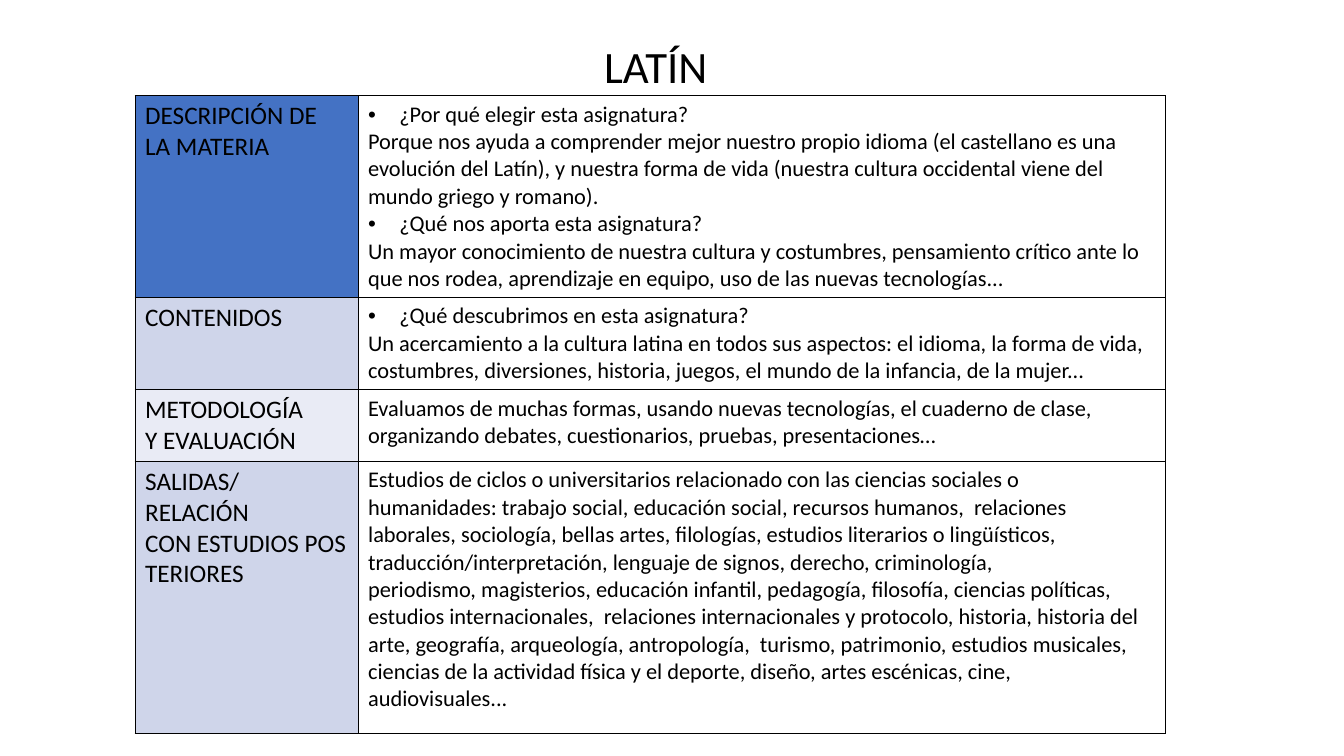
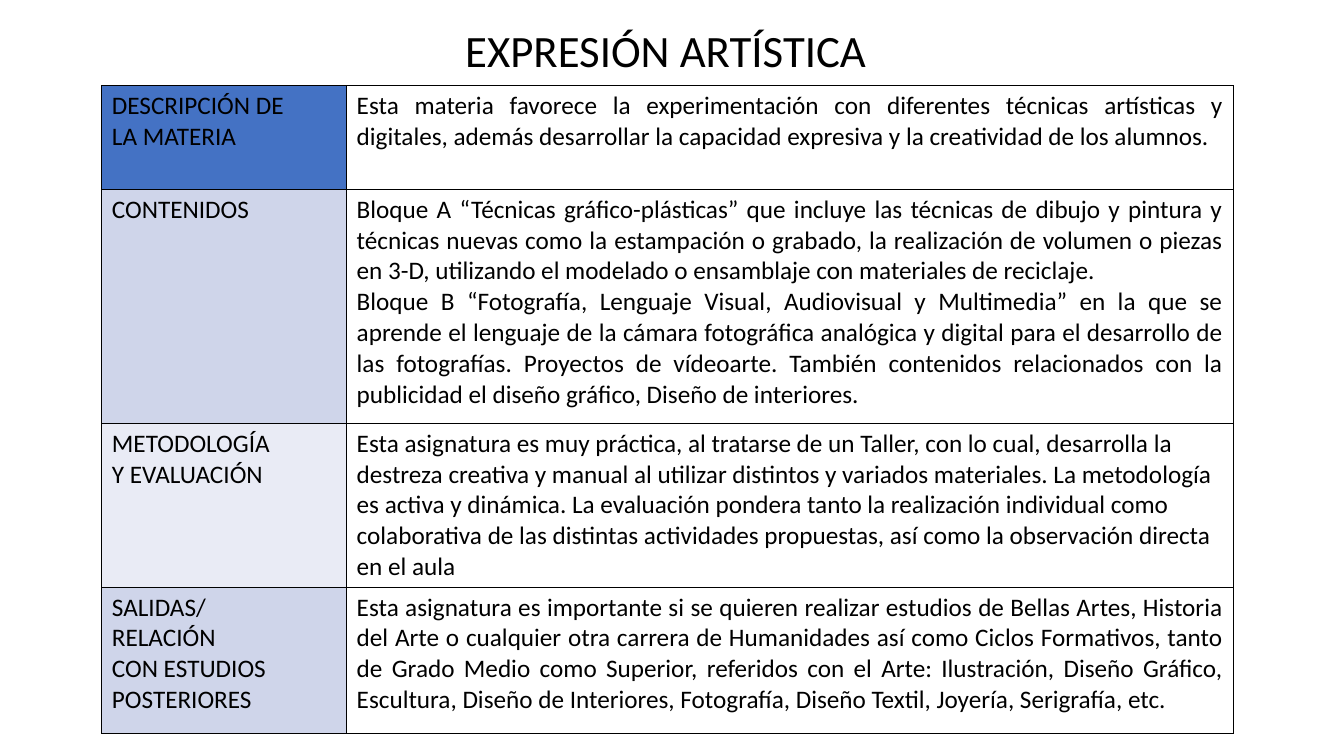
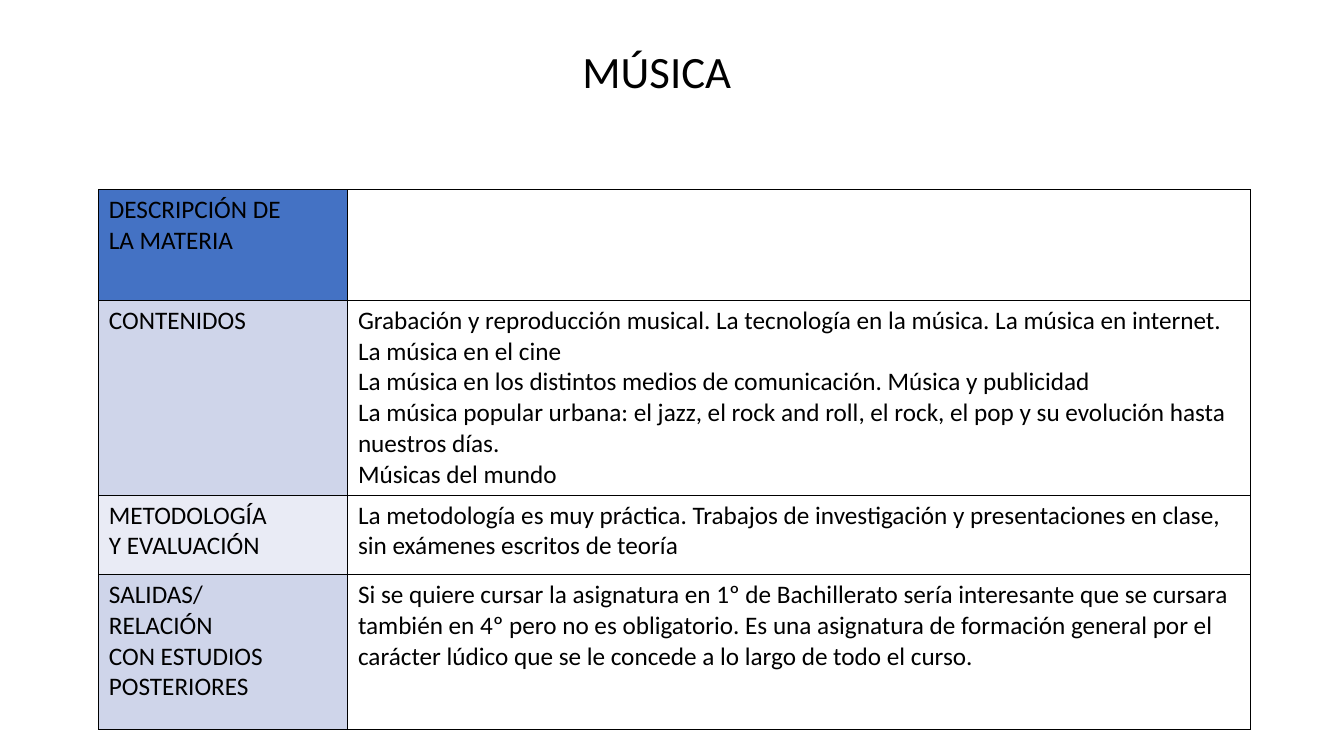
from lxml import etree
from pptx import Presentation
from pptx import util as u
from pptx.dml.color import RGBColor
from pptx.enum import text as t
from pptx.oxml import ns

COLORS = {"ink": "000000", "first": "4472C4", "dark": "CFD5EA", "light": "E9EBF5"}
FONT = "Calibri"
SLIDE_W, SLIDE_H = u.Inches(13.33), u.Inches(7.5)
TITLE_W, TITLE_H = 37.13, 8.4  # percent of the slide
LABEL_SHARE = 21.64  # percent of the table width
LABEL_FILLS = ("first", "dark", "light", "dark")
LABEL_SIZE = 18
BULLET = "• "
BULLET_INDENT = u.Inches(0.31)
HARD_SPACE = "~"  # stands for a no-break space in the texts below

LABELS = [
    ["DESCRIPCIÓN DE LA~MATERIA"],
    ["CONTENIDOS"],
    ["METODOLOGÍA Y~EVALUACIÓN"],
    ["SALIDAS/", "RELACIÓN CON~ESTUDIOS~", "POSTERIORES"],
]

SUBJECTS = [
    {
        "name": "LATÍN",
        "title_at": (30.23, 4.53),
        "table_at": (10.05, 12.67),
        "width": 76.67,
        "rows": (26.67, 12, 9.33, 36),
        "size": 16,
        "labels": LABELS[:3] + [["SALIDAS/", "RELACIÓN CON~ESTUDIOS~POSTERIORES"]],
        "details": [
            ["• ¿Por qué elegir esta asignatura?~",
             "Porque nos ayuda a comprender mejor nuestro propio~idioma (el castellano es una "
             "evolución del Latín), y nuestra forma de~vida (nuestra cultura occidental viene "
             "del mundo griego y~romano).~",
             "• ¿Qué nos aporta esta asignatura?~",
             "Un mayor conocimiento de nuestra cultura y costumbres,~pensamiento crítico ante "
             "lo que nos rodea, aprendizaje en~equipo, uso de las nuevas tecnologías...~"],
            ["• ¿Qué descubrimos en esta asignatura?~",
             "Un acercamiento a la cultura latina en todos sus aspectos:~el idioma, la forma de "
             "vida, costumbres, diversiones,~historia, juegos, el mundo de la infancia, de la "
             "mujer...~"],
            ["Evaluamos de muchas formas, usando nuevas tecnologías, el cuaderno de clase, "
             "organizando debates, cuestionarios, pruebas, presentaciones…"],
            ["Estudios de ciclos o universitarios relacionado con las ciencias sociales o "
             "humanidades:~trabajo social, educación social, recursos humanos,~ relaciones "
             "laborales, sociología, bellas artes, filologías, estudios literarios o "
             "lingüísticos, traducción/interpretación, lenguaje de signos, derecho, "
             "criminología,~ periodismo,~magisterios,~educación infantil, pedagogía, "
             "filosofía, ciencias políticas, estudios internacionales,~ relaciones "
             "internacionales y protocolo, historia, historia del arte, geografía, "
             "arqueología, antropología,~~turismo,~patrimonio, estudios musicales, ciencias "
             "de la actividad física y el deporte, diseño, artes~escénicas, cine, "
             "audiovisuales...~"],
        ],
    },
    {
        "name": "EXPRESIÓN ARTÍSTICA",
        "title_at": (30.98, 2.4),
        "table_at": (7.58, 11.33),
        "width": 84.17,
        "rows": (13.73, 30.93, 21.33, 19.33),
        "justified": (0, 1, 3),
        "details": [
            ["Esta materia favorece la experimentación con diferentes técnicas artísticas y "
             "digitales, además desarrollar la capacidad expresiva y la creatividad de los "
             "alumnos.~"],
            ["Bloque A “Técnicas gráfico-plásticas” que incluye las técnicas de dibujo y "
             "pintura y técnicas nuevas como la estampación o grabado, la realización de "
             "volumen o piezas en 3-D, utilizando el modelado o ensamblaje con materiales de "
             "reciclaje.",
             "Bloque B “Fotografía, Lenguaje Visual, Audiovisual y Multimedia” en la que se "
             "aprende el lenguaje de la cámara fotográfica analógica y digital para el "
             "desarrollo de las fotografías. Proyectos de vídeoarte. También contenidos "
             "relacionados con la publicidad el diseño gráfico, Diseño de interiores."],
            ["Esta asignatura es muy práctica, al tratarse de un Taller, con lo cual, "
             "desarrolla la destreza creativa y manual al utilizar distintos y variados "
             "materiales. La metodología es activa y dinámica. La evaluación pondera tanto la "
             "realización individual como colaborativa de las distintas actividades "
             "propuestas, así como la observación directa en el aula"],
            ["Esta asignatura es importante si se quieren realizar estudios de Bellas Artes, "
             "Historia del Arte o cualquier otra carrera de Humanidades así como Ciclos "
             "Formativos, tanto de Grado Medio como Superior, referidos con el Arte: "
             "Ilustración, Diseño Gráfico, Escultura, Diseño de Interiores, Fotografía, "
             "Diseño Textil, Joyería, Serigrafía, etc."],
        ],
    },
    {
        "name": "MÚSICA",
        "title_at": (30.31, 5.2),
        "table_at": (7.35, 25.07),
        "width": 85.67,
        "rows": (14.67, 25.33, 10.53, 20.53),
        "details": [
            [],
            ["Grabación y reproducción musical. La tecnología en la música. La música "
             "en~internet.",
             "La música en el cine",
             "La música en los distintos medios de comunicación. Música y publicidad",
             "La música popular urbana: el jazz, el rock and roll, el rock, el pop y "
             "su~evolución hasta nuestros días.",
             "Músicas del mundo"],
            ["La metodología es muy práctica. Trabajos de investigación y presentaciones en "
             "clase, sin exámenes escritos de teoría"],
            ["Si se quiere cursar la asignatura en 1º de Bachillerato sería interesante que "
             "se cursara también en 4º pero no es obligatorio. Es una asignatura de formación "
             "general por el carácter lúdico que se le concede a lo largo de todo el curso."],
        ],
    },
]


def across(percent):
    return round(SLIDE_W * percent / 100)


def down(percent):
    return round(SLIDE_H * percent / 100)


def add_bullet(paragraph):
    props = paragraph._p.get_or_add_pPr()
    props.set("marL", str(BULLET_INDENT))
    props.set("indent", str(-BULLET_INDENT))
    etree.SubElement(props, ns.qn("a:buFont"), typeface="Arial")
    etree.SubElement(props, ns.qn("a:buChar"), char=BULLET.strip())


def write(frame, lines, size=LABEL_SIZE, align=t.PP_ALIGN.LEFT, color="ink"):
    """Fill a text frame, one paragraph a line; a leading bullet makes a list item."""
    for number, line in enumerate(lines):
        paragraph = frame.add_paragraph() if number else frame.paragraphs[0]
        paragraph.alignment = align
        if line.startswith(BULLET):
            add_bullet(paragraph)
        run = paragraph.add_run()
        run.text = line.removeprefix(BULLET).replace(HARD_SPACE, chr(160))
        run.font.name, run.font.size = FONT, u.Pt(size)
        run.font.color.rgb = RGBColor.from_string(COLORS[color])


def style_cell(cell, fill=None):
    """Draw a thin border on all sides, then fill the cell or leave it clear."""
    props = cell._tc.get_or_add_tcPr()
    for side in ("lnL", "lnR", "lnT", "lnB"):
        line = etree.SubElement(props, ns.qn(f"a:{side}"), w=str(u.Pt(0.75)))
        solid = etree.SubElement(line, ns.qn("a:solidFill"))
        etree.SubElement(solid, ns.qn("a:srgbClr"), val=COLORS["ink"])
    if fill:
        cell.fill.solid()
        cell.fill.fore_color.rgb = RGBColor.from_string(COLORS[fill])
    else:
        cell.fill.background()


def place_title(slide, name, left, top):
    title = slide.shapes.title
    title.left, title.top = across(left), down(top)
    title.width, title.height = across(TITLE_W), down(TITLE_H)
    frame = title.text_frame
    frame.word_wrap, frame.auto_size = True, t.MSO_AUTO_SIZE.NONE
    frame.vertical_anchor = t.MSO_ANCHOR.MIDDLE
    write(frame, [name], size=32, align=t.PP_ALIGN.CENTER)


def place_table(slide, left, top, width, rows, labels, details, size, justified):
    table = slide.shapes.add_table(len(rows), 2, across(left), down(top),
                                   across(width), down(sum(rows))).table
    table.first_row = table.horz_banding = False
    for column, share in zip(table.columns, (LABEL_SHARE, 100 - LABEL_SHARE)):
        column.width = across(width * share / 100)
    for number, height in enumerate(rows):
        table.rows[number].height = down(height)
        label, detail = table.cell(number, 0), table.cell(number, 1)
        style_cell(label, LABEL_FILLS[number])
        style_cell(detail)
        write(label.text_frame, labels[number])
        write(detail.text_frame, details[number], size=size,
              align=t.PP_ALIGN.JUSTIFY if number in justified else t.PP_ALIGN.LEFT)


def add_subject(deck, subject):
    slide = deck.slides.add_slide(deck.slide_layouts.get_by_name("Title Only"))
    place_title(slide, subject["name"], *subject["title_at"])
    place_table(slide, *subject["table_at"], subject["width"], subject["rows"],
                subject.get("labels", LABELS), subject["details"],
                subject.get("size", LABEL_SIZE), subject.get("justified", ()))


def main():
    deck = Presentation()
    deck.slide_width, deck.slide_height = SLIDE_W, SLIDE_H
    for subject in SUBJECTS:
        add_subject(deck, subject)
    deck.save("out.pptx")


if __name__ == "__main__":
    main()
